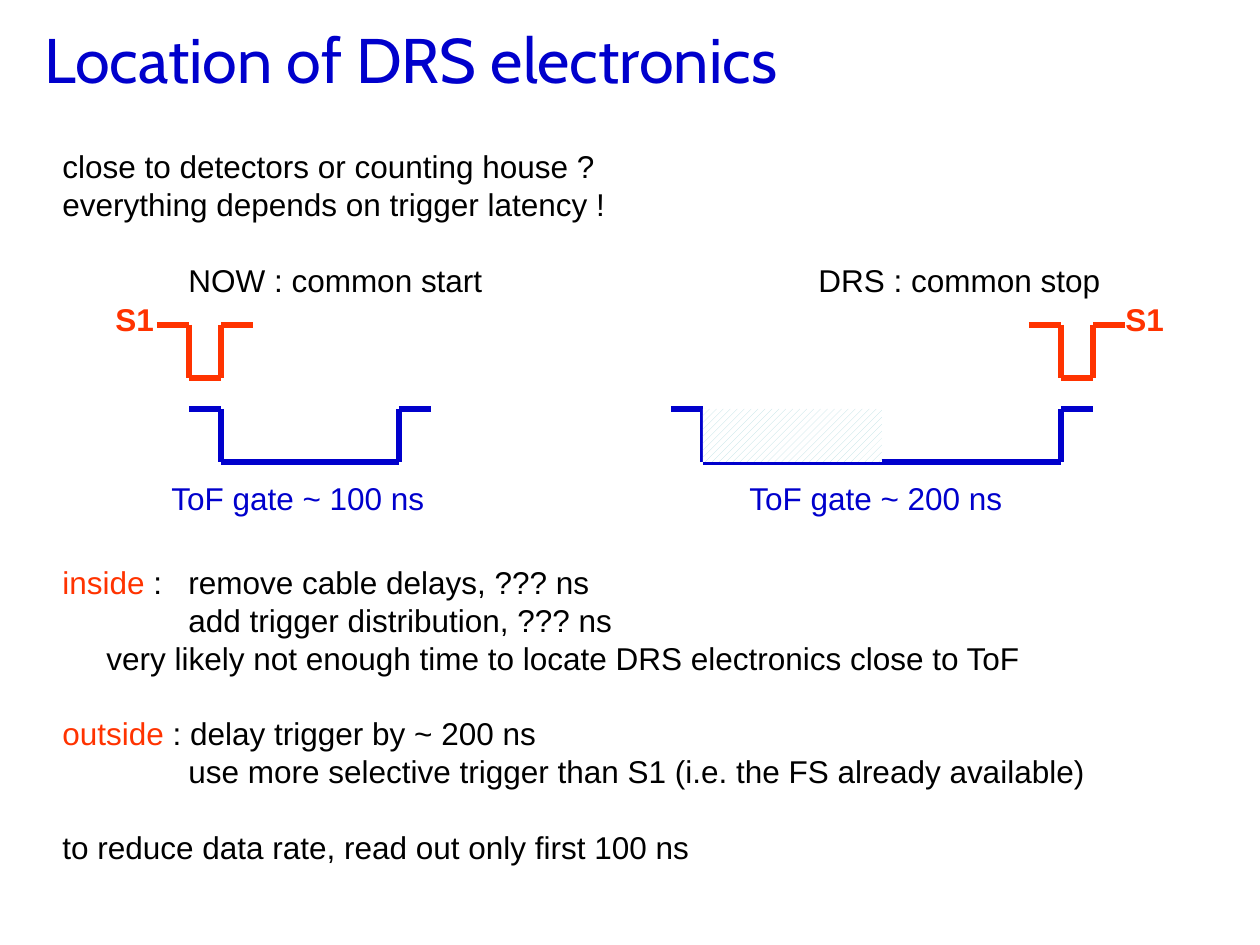
from itertools import pairwise

from lxml.etree import SubElement
from pptx import Presentation
from pptx.dml.color import RGBColor
from pptx.enum.dml import MSO_PATTERN
from pptx.enum.shapes import MSO_CONNECTOR, MSO_SHAPE
from pptx.enum.text import MSO_ANCHOR
from pptx.oxml.ns import qn
from pptx.util import Emu, Pt

BLUE = RGBColor(0x00, 0x00, 0xCC)
RED = RGBColor(0xFF, 0x33, 0x00)
BLACK = RGBColor(0x00, 0x00, 0x00)
WHITE = RGBColor(0xFF, 0xFF, 0xFF)
PALE = RGBColor(0xBB, 0xE0, 0xE3)

LINE = 21.6  # text line height in points
LEAD, DROP = 32, 53  # pulse shoulder width and depth
TAB_STOPS = (126, 756)


def px(count):
    return Emu(round(count * 914400 / 126))


def add_box(page, left, top, width, height, wrap=True):
    box = page.shapes.add_textbox(px(left), px(top), px(width), px(height))
    box.text_frame.word_wrap = wrap
    return box.text_frame


def add_text(para, text, size=18, font="Arial", color=BLACK, bold=False):
    span = para.add_run()
    span.text = text
    span.font.size = Pt(size)
    span.font.name = font
    span.font.bold = bold
    span.font.color.rgb = color


def add_label(page, left, top, width, text, **style):
    para = add_box(page, left, top, width, 50, wrap=False).paragraphs[0]
    para.line_spacing = Pt(LINE)
    add_text(para, text, **style)


def draw_title(page, left, top, width, height):
    frame = add_box(page, left, top, width, height)
    frame.vertical_anchor = MSO_ANCHOR.MIDDLE
    add_text(frame.paragraphs[0], "Location of DRS electronics",
             size=36, font="Cabin", color=BLUE)


def draw_body(page, left, top, width, height):
    # Each entry: empty lines before, left indent, red lead word, text
    lines = [
        (0, 0, "", "close to detectors or counting house ?"),
        (0, 0, "", "everything depends on trigger latency !"),
        (1, 0, "", "\tNOW : common start\tDRS : common stop"),
        (7, 0, "inside", " :\tremove cable delays, ??? ns"),
        (0, 0, "", "\tadd trigger distribution, ??? ns"),
        (0, 44, "", "very likely not enough time to locate DRS electronics close to ToF"),
        (1, 0, "outside", " : delay trigger by ~ 200 ns"),
        (0, 0, "", "\tuse more selective trigger than S1 (i.e. the FS already available)"),
        (1, 0, "", "to reduce data rate, read out only first 100 ns"),
    ]
    frame = add_box(page, left, top, width, height)
    for index, (gap, indent, lead, text) in enumerate(lines):
        para = frame.add_paragraph() if index else frame.paragraphs[0]
        para.line_spacing = Pt(LINE)
        if gap:
            para.space_before = Pt(gap * LINE)
        props = para._p.get_or_add_pPr()
        if indent:
            props.set("marL", str(px(indent)))
        if "\t" in text:
            tabs = SubElement(props, qn("a:tabLst"))
            for stop in TAB_STOPS:
                SubElement(tabs, qn("a:tab"), pos=str(px(stop)), algn="l")
        if lead:
            add_text(para, lead, color=RED)
        add_text(para, text)


def draw_pulse(page, left, top, well, color):
    """Negative logic pulse: shoulder, drop, well, rise, shoulder."""
    fall, rise, low = left + LEAD, left + LEAD + well, top + DROP
    points = [(left, top), (fall, top), (fall, low),
              (rise, low), (rise, top), (rise + LEAD, top)]
    for start, end in pairwise(points):
        edge = page.shapes.add_connector(
            MSO_CONNECTOR.STRAIGHT, *map(px, start + end))
        edge.line.color.rgb = color
        edge.line.width = Pt(3)
        SubElement(edge._element.spPr, qn("a:effectLst"))


def draw_hatch(page, left, top, width, height):
    hatch = page.shapes.add_shape(
        MSO_SHAPE.RECTANGLE, px(left), px(top), px(width), px(height))
    hatch.shadow.inherit = False
    hatch.fill.patterned()
    hatch.fill.pattern = MSO_PATTERN.WIDE_UPWARD_DIAGONAL
    hatch.fill.fore_color.rgb = PALE
    hatch.fill.back_color.rgb = WHITE
    hatch.line.fill.background()


def draw_timing(page, top, trigger_left, gate_left, gate_well,
                trigger_label, gate_label, gate_text, hatch_width=0):
    gate_top = top + 84
    draw_pulse(page, trigger_left, top, LEAD, RED)
    draw_pulse(page, gate_left, gate_top, gate_well, BLUE)
    if hatch_width:
        draw_hatch(page, gate_left + LEAD, gate_top, hatch_width, DROP)
    add_label(page, trigger_label, top - 31, 64, "S1", color=RED, bold=True)
    add_label(page, gate_label, top + 148, 282, gate_text, color=BLUE)


def main():
    deck = Presentation()
    deck.slide_width, deck.slide_height = px(1260), px(945)
    page = deck.slides.add_slide(deck.slide_layouts[6])

    draw_title(page, 32, 0, 1228, 116)
    draw_body(page, 50, 141, 1063, 732)

    # Common start on the left, common stop on the right
    draw_timing(page, 325, 157, 189, 178, 103, 159, "ToF gate ~ 100 ns")
    draw_timing(page, 325, 1029, 671, 358, 1113, 737, "ToF gate ~ 200 ns",
                hatch_width=179)

    deck.save("out.pptx")


if __name__ == "__main__":
    main()
